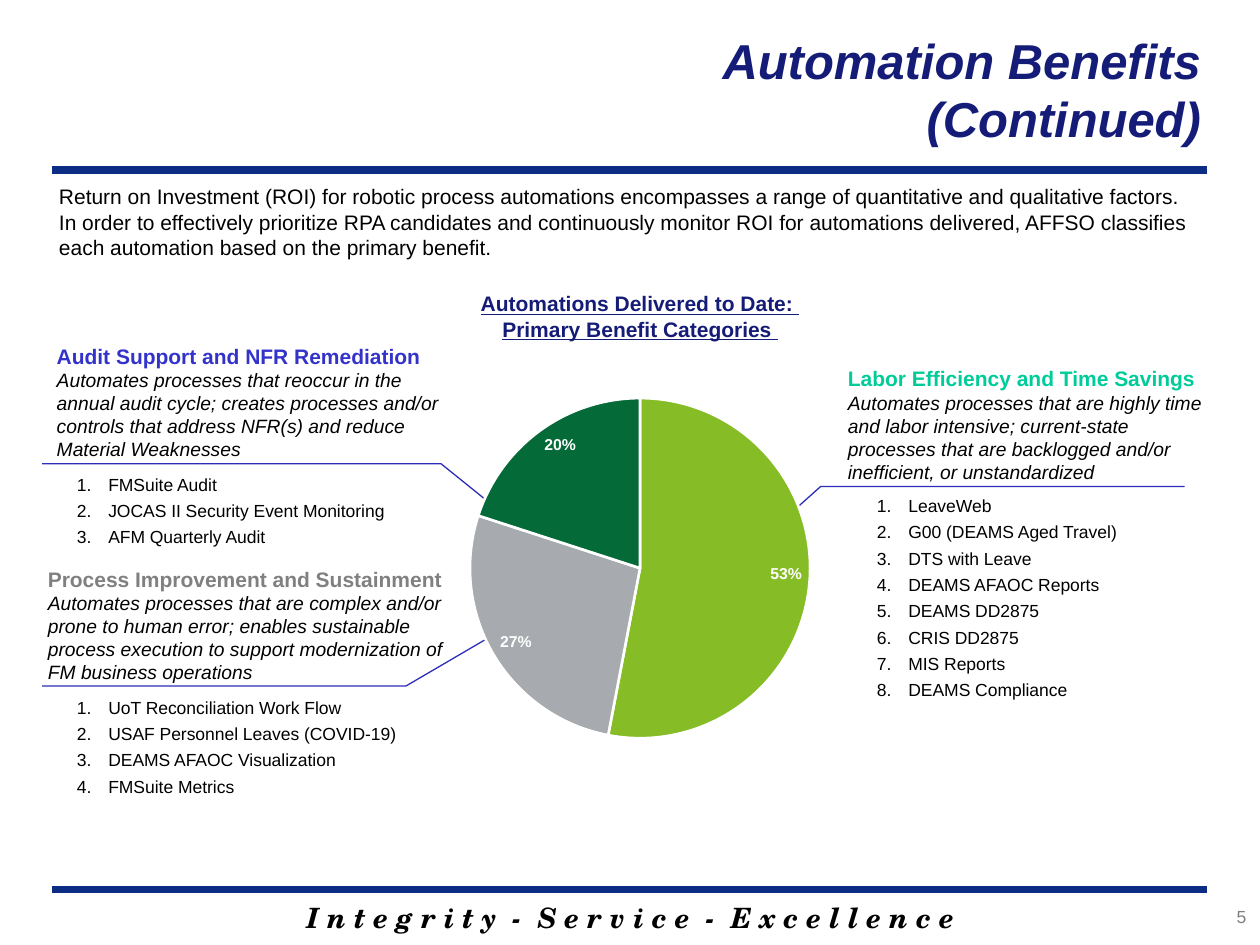
from lxml.etree import SubElement
from pptx import Presentation
from pptx.chart.data import CategoryChartData
from pptx.dml.color import RGBColor
from pptx.enum.chart import XL_CHART_TYPE, XL_LABEL_POSITION
from pptx.enum.shapes import MSO_CONNECTOR
from pptx.enum.text import MSO_ANCHOR, PP_ALIGN
from pptx.oxml import parse_xml
from pptx.oxml.ns import nsdecls, qn
from pptx.util import Pt

NAVY = "151C77"
BLACK = "000000"


def color(hex_value):
    return RGBColor.from_string(hex_value)


def add_text(box, paragraphs, align=PP_ALIGN.LEFT, anchor=MSO_ANCHOR.TOP,
             inset=True, numbered=False):
    """Each paragraph is (text, size, color, bold, italic, underline, font)."""
    frame = slide.shapes.add_textbox(*[Pt(value) for value in box]).text_frame
    frame.word_wrap = True
    frame.vertical_anchor = anchor
    if not inset:
        frame.margin_left = frame.margin_right = 0
        frame.margin_top = frame.margin_bottom = 0
    for index, (text, size, hex_value, bold, italic, underline, font) in enumerate(paragraphs):
        paragraph = frame.add_paragraph() if index else frame.paragraphs[0]
        paragraph.alignment = align
        if numbered:
            properties = paragraph._p.get_or_add_pPr()
            properties.set("marL", str(Pt(18)))
            properties.set("indent", str(Pt(-18)))
            SubElement(properties, qn("a:buFont")).set("typeface", "+mj-lt")
            SubElement(properties, qn("a:buAutoNum")).set("type", "arabicPeriod")
            if index:
                paragraph.space_before = Pt(3)
        run = paragraph.add_run()
        run.text = text
        run.font.name = font
        run.font.size = Pt(size)
        run.font.bold, run.font.italic, run.font.underline = bold, italic, underline
        run.font.color.rgb = color(hex_value)


presentation = Presentation()
presentation.slide_width, presentation.slide_height = Pt(720), Pt(540)
slide = presentation.slides.add_slide(presentation.slide_layouts[6])

# Footer motto, page number and the two rules
add_text((102.24, 511.2, 516.24, 26.64),
         [("I n t e g r i t y  -  S e r v i c e  -  E x c e l l e n c e",
           16, BLACK, True, True, False, "TeX Gyre Schola")], PP_ALIGN.CENTER)
add_text((629.28, 514.08, 90, 23.76),
         [("5", 10, "7F7F7F", False, False, False, "Arial")], PP_ALIGN.RIGHT)
for top in (97.2, 508.32):
    rule = slide.shapes.add_connector(MSO_CONNECTOR.STRAIGHT, Pt(30), Pt(top), Pt(690), Pt(top))
    rule.line.color.rgb = color("0C2D83")
    rule.line.width = Pt(4.5)
    rule._element.spPr.append(parse_xml(f"<a:effectLst {nsdecls('a')}/>"))

# Title, introduction and chart heading
add_text((131.04, 5.76, 562.32, 90),
         [(line, 28, NAVY, True, True, False, "Arial")
          for line in ("Automation Benefits", "(Continued)")],
         PP_ALIGN.RIGHT, MSO_ANCHOR.MIDDLE)
add_text((26.64, 101.52, 659.52, 44.64),
         [("Return on Investment (ROI) for robotic process automations encompasses a range of "
           "quantitative and qualitative factors. In order to effectively prioritize RPA candidates "
           "and continuously monitor ROI for automations delivered, AFFSO classifies each automation "
           "based on the primary benefit.", 12, BLACK, False, False, False, "Arial")])
add_text((203.76, 166.32, 324, 14.4),
         [(line, 12, NAVY, True, False, True, "Arial")
          for line in ("Automations Delivered to Date: ", "Primary Benefit Categories ")],
         PP_ALIGN.CENTER, inset=False)

# Benefit categories: heading, description, numbered automations and leader line
categories = [
    ("Process Improvement and Sustainment", "808080",
     "Automates processes that are complex and/or prone to human error; enables sustainable "
     "process execution to support modernization of FM business operations",
     (27.36, 323.28, 228.24, 67.68), (43.92, 398.16, 194.4, 57.6),
     ["UoT Reconciliation Work Flow", "USAF Personnel Leaves (COVID-19)",
      "DEAMS AFAOC Visualization", "FMSuite Metrics"],
     [(297.36, 354.24), (231.84, 392.4), (24.48, 392.4)]),
    ("Audit Support and NFR Remediation", "3333CC",
     "Automates processes that reoccur in the annual audit cycle; creates processes and/or "
     "controls that address NFR(s) and reduce Material Weaknesses",
     (32.4, 195.84, 223.92, 67.68), (43.92, 270.72, 197.28, 42.48),
     ["FMSuite Audit", "JOCAS II Security Event Monitoring", "AFM Quarterly Audit"],
     [(324, 322.56), (252, 264.96), (24.48, 264.96)]),
    ("Labor Efficiency and Time Savings", "00CC99",
     "Automates processes that are highly time and labor intensive; current-state processes "
     "that are backlogged and/or inefficient, or unstandardized",
     (484.56, 208.8, 208.8, 67.68), (501.12, 282.96, 158.4, 133.2),
     ["LeaveWeb", "G00 (DEAMS Aged Travel)", "DTS with Leave", "DEAMS AFAOC Reports",
      "DEAMS DD2875", "CRIS DD2875", "MIS Reports", "DEAMS Compliance"],
     [(403.92, 335.52), (469.44, 277.92), (676.8, 277.92)]),
]
for heading, heading_color, description, heading_box, list_box, automations, points in categories:
    builder = slide.shapes.build_freeform(*points[0], scale=Pt(1))
    builder.add_line_segments(points[1:], close=False)
    leader = builder.convert_to_shape()
    leader.shadow.inherit = False
    leader.fill.background()
    leader.line.color.rgb = color("2D2DB9")
    leader.line.width = Pt(0.75)
    add_text(heading_box,
             [(heading, 12, heading_color, True, False, False, "Arial"),
              (description, 11, BLACK, False, True, False, "Arial")],
             anchor=MSO_ANCHOR.MIDDLE, inset=False)
    add_text(list_box,
             [(name, 10, BLACK, False, False, False, "Arial") for name in automations],
             inset=False, numbered=True)

# Pie chart of automations by primary benefit
chart_data = CategoryChartData(number_format="0%")
chart_data.categories = ["1", "2", "3"]
chart_data.add_series("Series 1", (0.53, 0.27, 0.2))
chart = slide.shapes.add_chart(XL_CHART_TYPE.PIE, Pt(185.76), Pt(216.72), Pt(360), Pt(216),
                               chart_data).chart
chart.has_title = chart.has_legend = False
chart.font.name = "Arial"
chart.font.size = Pt(10)
chart.font.color.rgb = color(BLACK)
plot = chart.plots[0]
plot.vary_by_categories = True
for index, hex_value in enumerate(("86BC25", "A7AAAE", "046A38")):
    slice_format = plot.series[0].points[index].format
    slice_format.fill.solid()
    slice_format.fill.fore_color.rgb = color(hex_value)
    slice_format.line.color.rgb = color("FFFFFF")
    slice_format.line.width = Pt(1.5)
plot.has_data_labels = True
labels = plot.data_labels
labels.show_value = True
labels.show_percentage = False
labels.number_format, labels.number_format_is_linked = "0%", False
labels.position = XL_LABEL_POSITION.INSIDE_END
labels.font.name = "Arial"
labels.font.size = Pt(9)
labels.font.bold = True
labels.font.color.rgb = color("FFFFFF")

# Fix the pie at 90% of the chart height
plot_area = chart._chartSpace.chart.plotArea
for old_layout in plot_area.findall(qn("c:layout")):
    plot_area.remove(old_layout)
plot_area.insert(0, parse_xml(
    f'<c:layout {nsdecls("c")}><c:manualLayout><c:layoutTarget val="inner"/>'
    '<c:xMode val="edge"/><c:yMode val="edge"/><c:x val="0.23"/><c:y val="0.05"/>'
    '<c:w val="0.54"/><c:h val="0.9"/></c:manualLayout></c:layout>'))

presentation.save("out.pptx")
